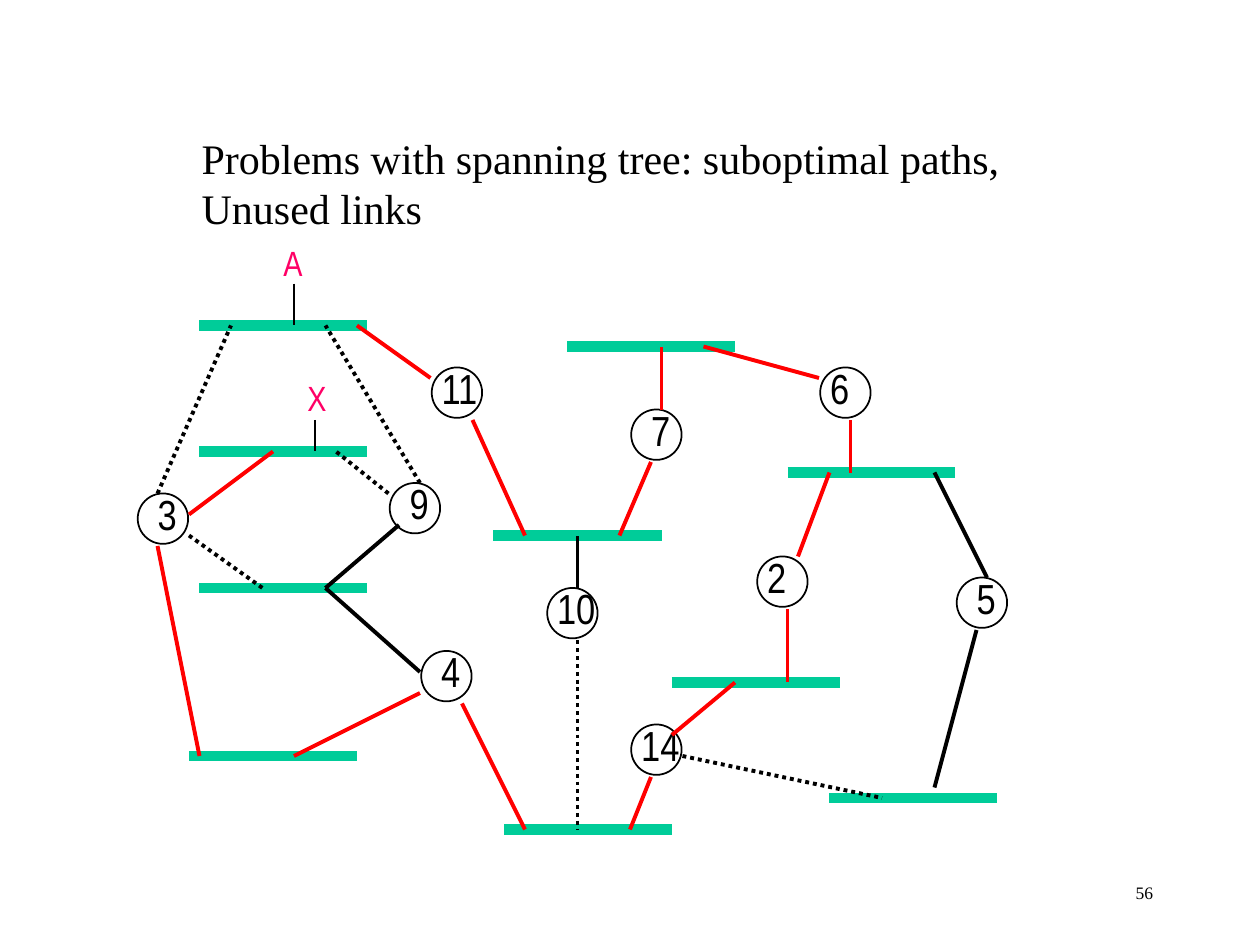
from lxml.etree import SubElement
from pptx import Presentation
from pptx.dml.color import RGBColor
from pptx.enum.dml import MSO_LINE
from pptx.enum.shapes import MSO_CONNECTOR, MSO_SHAPE
from pptx.enum.text import MSO_ANCHOR, MSO_AUTO_SIZE, PP_ALIGN
from pptx.oxml.ns import qn
from pptx.util import Inches, Pt

COLUMNS = 120
WIDTH, HEIGHT = 10, 7.5
CELL = WIDTH / COLUMNS
BLACK, RED, GREEN, PINK = "000000", "FF0000", "00CC99", "FF0066"
SERIF, NARROW = "Times New Roman", "Arial Narrow"

TITLE = ["Problems with spanning tree: suboptimal paths,", "Unused links"]
PAGE_NUMBER = "56"

SEGMENT_LENGTH = 16
SEGMENTS = [(19, 31), (19, 43), (19, 56), (54, 33), (75, 45),
            (47, 51), (18, 72), (64, 65), (48, 79), (79, 76)]

BRIDGE_SIZE = 0.4
SHIFT_LEFT, SHIFT_RIGHT = -0.02, 0.06
BRIDGES = [
    ("11", 41, 35, SHIFT_LEFT), ("4", 40, 62, SHIFT_RIGHT),
    ("3", 13, 47, SHIFT_RIGHT), ("7", 60, 39, SHIFT_RIGHT),
    ("2", 72, 53, SHIFT_LEFT), ("14", 60, 69, SHIFT_LEFT),
    ("10", 52, 56, SHIFT_LEFT), ("9", 37, 46, SHIFT_RIGHT),
    ("5", 91, 55, SHIFT_RIGHT), ("6", 78, 35, SHIFT_LEFT),
]

TREE_LINKS = [
    (18, 49, 26, 43), (15, 52, 19, 72), (45, 40, 50, 51), (41, 36, 34, 31),
    (62, 44, 59, 51), (63, 39, 63, 33), (78, 36, 67, 33), (81, 45, 81, 40),
    (79, 45, 76, 53), (40, 66, 28, 72), (44, 67, 50, 79), (62, 74, 60, 79),
    (64, 70, 70, 65), (75, 58, 75, 65),
]
PLAIN_LINKS = [(38, 50, 31, 56), (55, 56, 55, 51), (31, 56, 40, 64),
               (93, 60, 89, 75), (94, 55, 89, 45)]
UNUSED_LINKS = [(15, 47, 22, 31), (18, 51, 25, 56), (37, 47, 32, 43),
                (40, 46, 31, 31), (55, 61, 55, 79), (65, 72, 84, 76)]

STATIONS = [("A", 2.15, 1.93, (28, 27, 28, 31)),
            ("X", 2.34, 3, (30, 40, 30, 43))]


def color(hex_string):
    return RGBColor.from_string(hex_string)


def add_line(page, ends, hex_string, weight, dash=None):
    line = page.shapes.add_connector(
        MSO_CONNECTOR.STRAIGHT, *(Inches(end * CELL) for end in ends))
    line.line.color.rgb = color(hex_string)
    line.line.width = Pt(weight)
    if dash:
        line.line.dash_style = dash
    SubElement(line._element.spPr, qn("a:effectLst"))


def set_font(para, name, size, hex_string):
    para.font.name = name
    para.font.size = Pt(size)
    para.font.color.rgb = color(hex_string)


def add_label(page, text, place, size, hex_string):
    box = page.shapes.add_textbox(*map(Inches, place))
    frame = box.text_frame
    frame.text = text
    frame.word_wrap = False
    frame.auto_size = MSO_AUTO_SIZE.SHAPE_TO_FIT_TEXT
    para = frame.paragraphs[0]
    para.line_spacing = 0.82
    para.space_before = Pt(7.2)
    set_font(para, NARROW, size, hex_string)


def add_bridge(page, name, column, row, shift):
    left, top = column * CELL + 0.01, row * CELL
    circle = page.shapes.add_shape(
        MSO_SHAPE.OVAL, *map(Inches, (left, top, BRIDGE_SIZE, BRIDGE_SIZE)))
    circle.shadow.inherit = False
    circle.fill.background()
    circle.line.color.rgb = color(BLACK)
    circle.line.width = Pt(1)
    width = 0.2 + 0.17 * len(name)
    add_label(page, name, (left + shift, top - 0.02, width, 0.5), 24, BLACK)


def add_title(page):
    title = page.shapes.title
    title.left, title.top, title.width, title.height = map(
        Inches, (1.5, 1, 6.59, 0.91))
    frame = title.text_frame
    frame.text = "\n".join(TITLE)
    frame.word_wrap = False
    frame.auto_size = MSO_AUTO_SIZE.NONE
    frame.vertical_anchor = MSO_ANCHOR.TOP
    for para in frame.paragraphs:
        para.alignment = PP_ALIGN.LEFT
        set_font(para, SERIF, 24, BLACK)


def add_page_number(page):
    box = page.shapes.add_textbox(*map(Inches, (7.08, 6.83, 2.17, 0.5)))
    frame = box.text_frame
    frame.text = PAGE_NUMBER
    frame.word_wrap = True
    frame.vertical_anchor = MSO_ANCHOR.MIDDLE
    para = frame.paragraphs[0]
    para.alignment = PP_ALIGN.RIGHT
    set_font(para, SERIF, 10, BLACK)


def main():
    """Draw the network of segments, bridges and links on one slide."""
    deck = Presentation()
    deck.slide_width, deck.slide_height = Inches(WIDTH), Inches(HEIGHT)
    page = deck.slides.add_slide(deck.slide_layouts[5])
    add_title(page)
    add_page_number(page)
    for column, row in SEGMENTS:
        add_line(page, (column, row, column + SEGMENT_LENGTH, row), GREEN, 6)
    for bridge in BRIDGES:
        add_bridge(page, *bridge)
    for links, hex_string, dash in [(TREE_LINKS, RED, None),
                                    (PLAIN_LINKS, BLACK, None),
                                    (UNUSED_LINKS, BLACK, MSO_LINE.ROUND_DOT)]:
        for ends in links:
            add_line(page, ends, hex_string, 2.25, dash)
    for name, left, top, stem in STATIONS:
        add_label(page, name, (left, top, 0.35, 0.37), 20, PINK)
        add_line(page, stem, BLACK, 1)
    deck.save("out.pptx")


if __name__ == "__main__":
    main()
